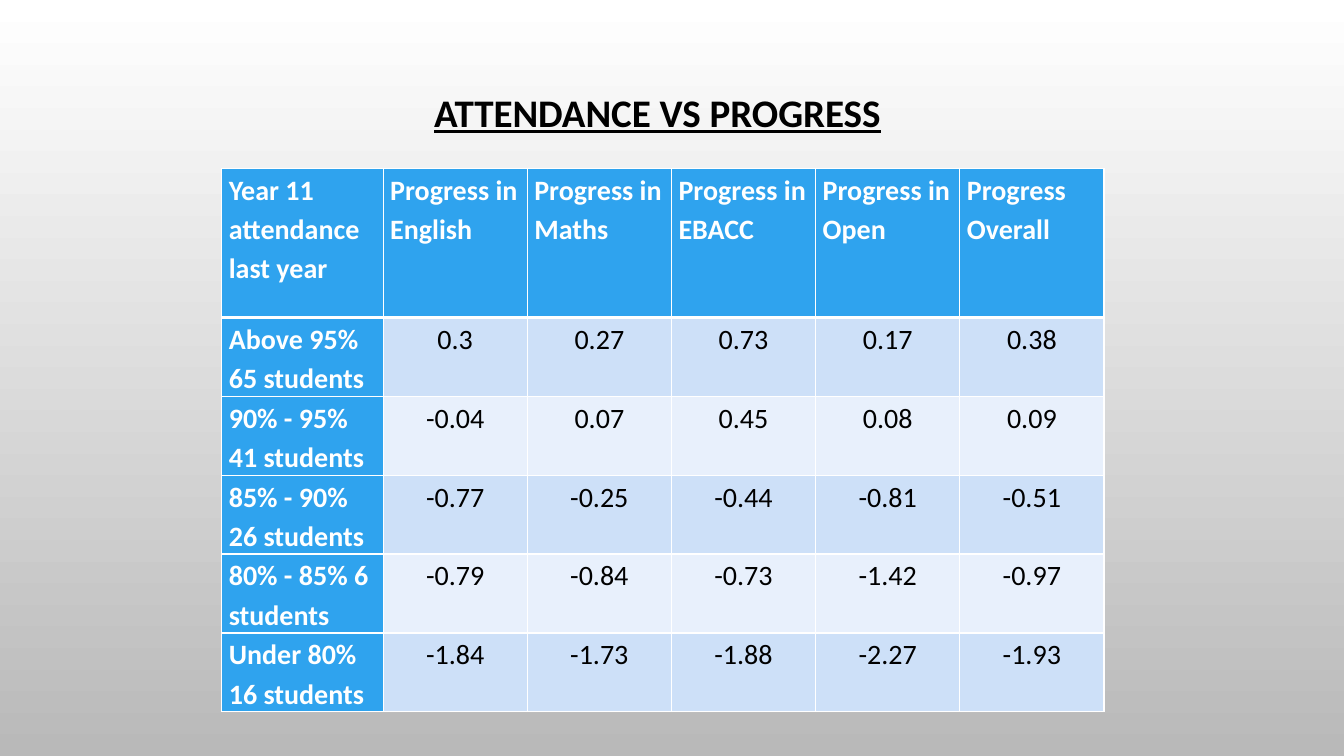
from dataclasses import dataclass

from lxml.etree import SubElement
from pptx import Presentation
from pptx.dml.color import RGBColor
from pptx.enum.text import MSO_ANCHOR, MSO_AUTO_SIZE, PP_ALIGN
from pptx.oxml.ns import qn
from pptx.util import Inches, Pt

TITLE = "ATTENDANCE VS PROGRESS"
HEADS = [
    "Year 11 attendance last year",
    "Progress in English",
    "Progress in Maths",
    "Progress in EBACC",
    "Progress in Open",
    "Progress Overall",
]
ROWS = [
    ("Above 95% 65 students", "0.3", "0.27", "0.73", "0.17", "0.38"),
    ("90% - 95% 41 students", "-0.04", "0.07", "0.45", "0.08", "0.09"),
    ("85% - 90% 26 students", "-0.77", "-0.25", "-0.44", "-0.81", "-0.51"),
    ("80% - 85% 6 students", "-0.79", "-0.84", "-0.73", "-1.42", "-0.97"),
    ("Under 80% 16 students", "-1.84", "-1.73", "-1.88", "-2.27", "-1.93"),
]


@dataclass(frozen=True)
class Theme:
    font: str = "Calibri"
    title: float = 27.9
    body: float = 20
    black: str = "000000"
    white: str = "FFFFFF"
    gray: str = "B9B9B9"
    head: str = "2FA3EE"
    bands: tuple = ("CDE0F8", "E8F0FC")
    thin: float = 1
    thick: float = 3


THEME = Theme()


def color(code):
    return RGBColor.from_string(code)


def style(par, size, code, bold, align, gap):
    par.alignment = align
    par.line_spacing = gap
    font = par.font
    font.name = THEME.font
    font.size = Pt(size)
    font.bold = bold
    font.color.rgb = color(code)


def border(cell, side, width):
    props = cell._tc.get_or_add_tcPr()
    line = SubElement(props, qn(f"a:ln{side}"), w=str(Pt(width)))
    fill = SubElement(line, qn("a:solidFill"))
    SubElement(fill, qn("a:srgbClr"), val=THEME.white)


def paint(slide):
    fill = slide.background.fill
    fill.gradient()
    fill.gradient_angle = 270
    for stop, code, place in zip(fill.gradient_stops, (THEME.white, THEME.gray), (0, 1)):
        stop.color.rgb = color(code)
        stop.position = place


def add_title(slide):
    box = slide.shapes.title
    box.left, box.top, box.width, box.height = map(Inches, (2.02, 0.93, 9, 0.94))
    frame = box.text_frame
    frame.text = TITLE
    frame.word_wrap = True
    frame.auto_size = MSO_AUTO_SIZE.NONE
    frame.vertical_anchor = MSO_ANCHOR.TOP
    frame.margin_top = 0
    par = frame.paragraphs[0]
    style(par, THEME.title, THEME.black, True, PP_ALIGN.CENTER, 0.9)
    par.font.underline = True


def fill_cell(cell, text, row, col):
    label = row == 0 or col == 0
    for side in "LRTB":
        heavy = (row, side) in ((0, "B"), (1, "T"))
        border(cell, side, THEME.thick if heavy else THEME.thin)
    cell.fill.solid()
    cell.fill.fore_color.rgb = color(THEME.head if label else THEME.bands[(row - 1) % 2])
    cell.margin_left = cell.margin_right = Inches(0.07)
    cell.margin_top = cell.margin_bottom = 0
    cell.text = text
    style(
        cell.text_frame.paragraphs[0],
        THEME.body,
        THEME.white if label else THEME.black,
        label,
        PP_ALIGN.LEFT if label else PP_ALIGN.CENTER,
        1.15,
    )


def add_grid(slide):
    data = [HEADS, *ROWS]
    wide = [1.6] + [1.43] * (len(HEADS) - 1)
    high = [1.48] + [0.74] * len(ROWS)
    area = map(Inches, (2.2, 1.67, sum(wide), sum(high)))
    table = slide.shapes.add_table(len(data), len(HEADS), *area).table
    for col, width in zip(table.columns, wide):
        col.width = Inches(width)
    for row, height in zip(table.rows, high):
        row.height = Inches(height)
    for row, texts in enumerate(data):
        for col, text in enumerate(texts):
            fill_cell(table.cell(row, col), text, row, col)


def main():
    deck = Presentation()
    deck.slide_width = Inches(13.33)
    deck.slide_height = Inches(7.5)
    slide = deck.slides.add_slide(deck.slide_layouts[5])
    paint(slide)
    add_title(slide)
    add_grid(slide)
    deck.save("out.pptx")


if __name__ == "__main__":
    main()
